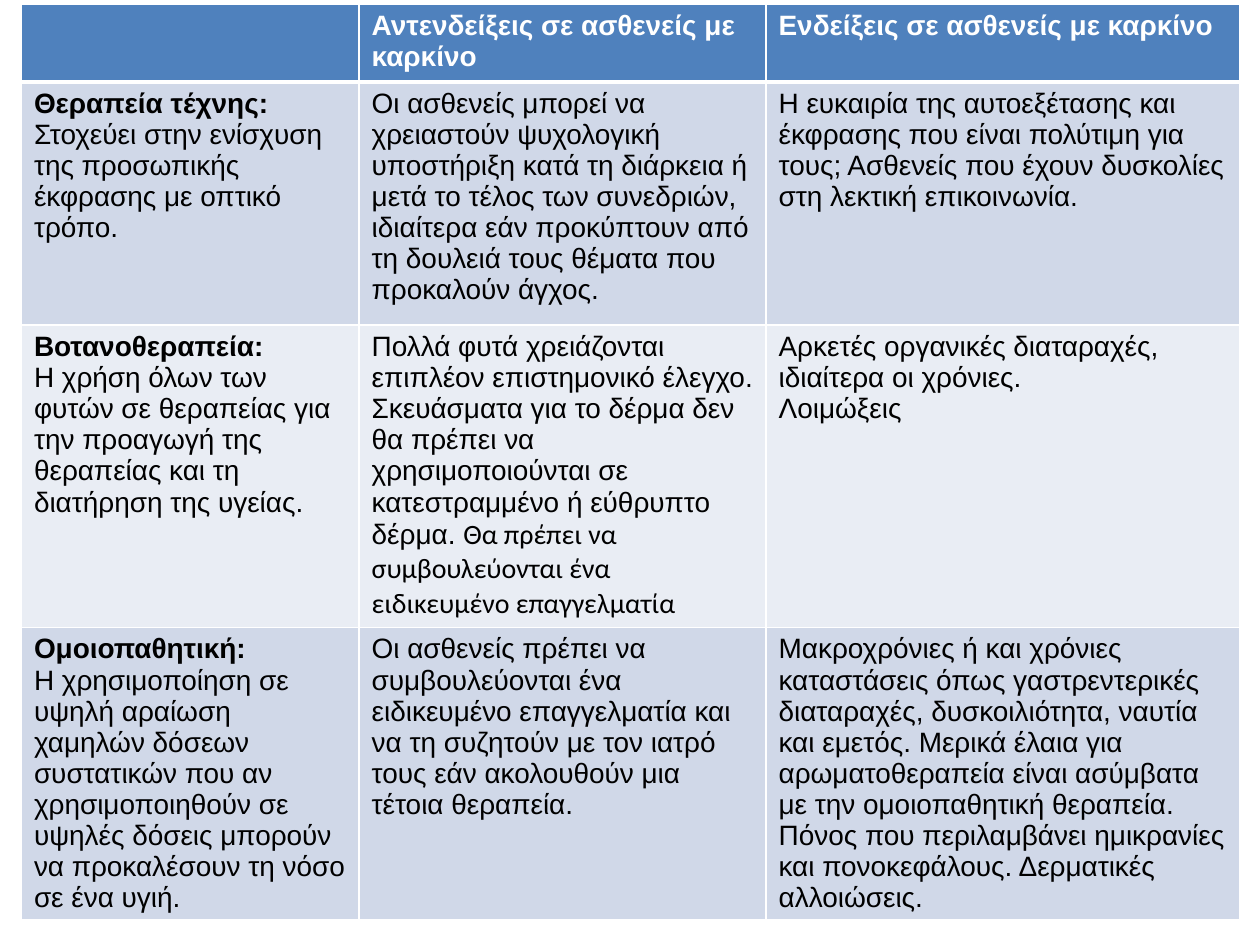
from lxml import etree
from pptx import Presentation
from pptx.dml.color import RGBColor
from pptx.oxml.ns import qn
from pptx.util import Inches, Pt

WHITE = RGBColor(0xFF, 0xFF, 0xFF)
BLACK = RGBColor(0x00, 0x00, 0x00)
BLUE = RGBColor(0x4F, 0x81, 0xBD)
BANDS = [RGBColor(0xE9, 0xED, 0xF4), RGBColor(0xD0, 0xD8, 0xE8)]

COLS = [2.68, 3.23, 3.76]
ROWS = [0.62, 1.93, 2.4, 2.32]

HEADS = ["", "Αντενδείξεις σε ασθενείς με καρκίνο",
         "Ενδείξεις σε ασθενείς με καρκίνο"]

# Each row: therapy, its aim, contraindications (runs), indications (paragraphs)
THERAPIES = [
    ("Θεραπεία τέχνης:",
     "Στοχεύει στην ενίσχυση της προσωπικής έκφρασης με οπτικό τρόπο.",
     ["Οι ασθενείς μπορεί να χρειαστούν ψυχολογική υποστήριξη κατά τη "
      "διάρκεια ή μετά το τέλος των συνεδριών, ιδιαίτερα εάν προκύπτουν από "
      "τη δουλειά τους θέματα που προκαλούν άγχος."],
     ["Η ευκαιρία της αυτοεξέτασης και έκφρασης που είναι πολύτιμη για τους; "
      "Ασθενείς που έχουν δυσκολίες στη λεκτική επικοινωνία."]),
    ("Βοτανοθεραπεία:",
     "Η χρήση όλων των φυτών σε θεραπείας για την προαγωγή της θεραπείας και "
     "τη διατήρηση της υγείας.",
     ["Πολλά φυτά χρειάζονται επιπλέον επιστημονικό έλεγχο. Σκευάσματα για το "
      "δέρμα δεν θα πρέπει να χρησιμοποιούνται σε κατεστραμμένο ή εύθρυπτο "
      "δέρμα. ",
      "Θα πρέπει να συμβουλεύονται ένα ειδικευμένο επαγγελματία"],
     ["Αρκετές οργανικές διαταραχές, ιδιαίτερα οι χρόνιες.", "Λοιμώξεις"]),
    ("Ομοιοπαθητική:",
     "Η χρησιμοποίηση σε υψηλή αραίωση χαμηλών δόσεων συστατικών που αν "
     "χρησιμοποιηθούν σε υψηλές δόσεις μπορούν να προκαλέσουν τη νόσο σε ένα "
     "υγιή.",
     ["Οι ασθενείς πρέπει να συμβουλεύονται ένα ειδικευμένο επαγγελματία και "
      "να τη συζητούν με τον ιατρό τους εάν ακολουθούν μια τέτοια θεραπεία."],
     ["Μακροχρόνιες ή και χρόνιες καταστάσεις όπως γαστρεντερικές διαταραχές, "
      "δυσκοιλιότητα, ναυτία και εμετός. Μερικά έλαια για αρωματοθεραπεία "
      "είναι ασύμβατα με την ομοιοπαθητική θεραπεία. Πόνος που περιλαμβάνει "
      "ημικρανίες και πονοκεφάλους. Δερματικές αλλοιώσεις."]),
]


def add_text(para, text, font="Arial", size=16, color=BLACK, bold=False):
    run = para.add_run()
    run.text = text
    run.font.name = font
    run.font.size = Pt(size)
    run.font.color.rgb = color
    run.font.bold = bold


def style_cell(cell, fill, top=1, bottom=1):
    """Fill the cell and give it white borders; widths are in points."""
    cell.fill.solid()
    cell.fill.fore_color.rgb = fill
    props = cell._tc.get_or_add_tcPr()
    widths = {"a:lnL": 1, "a:lnR": 1, "a:lnT": top, "a:lnB": bottom}
    for spot, (tag, width) in enumerate(widths.items()):
        line = etree.Element(qn(tag), w=str(Pt(width)))
        solid = etree.SubElement(line, qn("a:solidFill"))
        etree.SubElement(solid, qn("a:srgbClr"), val=str(WHITE))
        props.insert(spot, line)


def fill_head(table):
    for cell, text in zip(table.rows[0].cells, HEADS):
        style_cell(cell, BLUE, bottom=3)
        if text:
            add_text(cell.text_frame.paragraphs[0], text, color=WHITE, bold=True)


def fill_row(table, row, name, aim, cautions, uses):
    cells = [table.cell(row, col) for col in range(len(COLS))]
    for cell in cells:
        style_cell(cell, BANDS[row % 2], top=3 if row == 1 else 1)
    frames = [cell.text_frame for cell in cells]
    add_text(frames[0].paragraphs[0], name, bold=True)
    add_text(frames[0].add_paragraph(), aim)
    for text, font in zip(cautions, ["Arial", "Calibri"]):
        add_text(frames[1].paragraphs[0], text, font=font)
    add_text(frames[2].paragraphs[0], uses[0])
    for text in uses[1:]:
        add_text(frames[2].add_paragraph(), text)


def add_therapies(slide, left, top):
    table = slide.shapes.add_table(
        len(ROWS), len(COLS), Inches(left), Inches(top),
        Inches(sum(COLS)), Inches(sum(ROWS))).table
    for col, width in zip(table.columns, COLS):
        col.width = Inches(width)
    for row, height in zip(table.rows, ROWS):
        row.height = Inches(height)
    fill_head(table)
    for row, therapy in enumerate(THERAPIES, 1):
        fill_row(table, row, *therapy)


def main():
    deck = Presentation()
    deck.slide_width, deck.slide_height = Inches(10), Inches(7.5)
    slide = deck.slides.add_slide(deck.slide_layouts[6])
    add_therapies(slide, 0.17, 0.03)
    deck.save("out.pptx")


if __name__ == "__main__":
    main()
